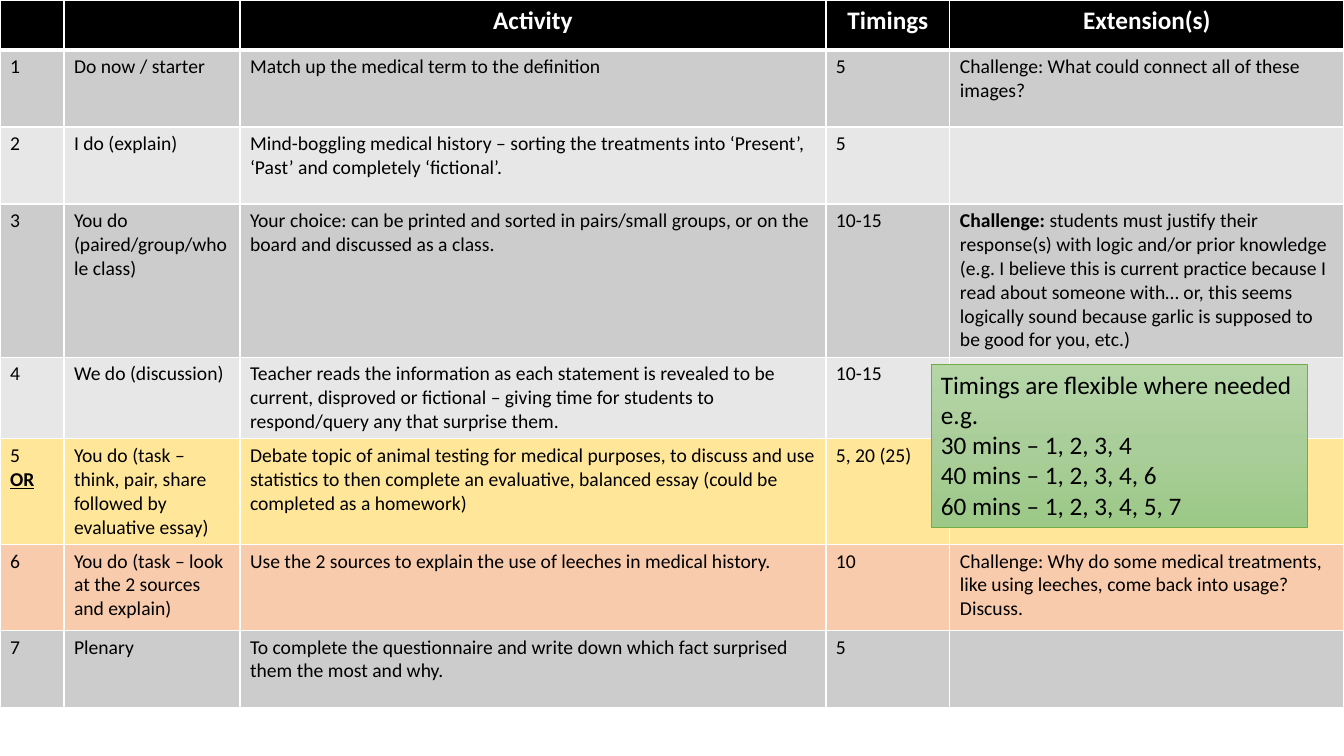
from copy import deepcopy

from lxml.etree import SubElement
from pptx import Presentation
from pptx.dml.color import RGBColor
from pptx.enum.shapes import MSO_SHAPE
from pptx.enum.text import MSO_ANCHOR, MSO_AUTO_SIZE, PP_ALIGN
from pptx.oxml.ns import qn
from pptx.util import Pt

PX = 12192000 / 1344
BLACK, WHITE = "000000", "FFFFFF"
GREY, LIGHT, YELLOW, PEACH = "CCCCCC", "E7E7E7", "FFE699", "F8CBAD"
HEADING = {"size": Pt(18), "bold": True}
BODY = {"size": Pt(14), "bold": False}
NOTE = {"size": Pt(18)}

COLUMNS = [64, 176, 586, 124, 394]
HEADINGS = ["", "", "Activity", "Timings", "Extension(s)"]
# Each lesson step: row height, fill, cells. A cell is a string or a list of
# paragraphs, each a list of (text, format) runs.
STEPS = [
    (77, GREY, ["1", "Do now / starter", "Match up the medical term to the definition", "5",
                "Challenge: What could connect all of these images?"]),
    (77, LIGHT, ["2", "I do (explain)",
                 "Mind-boggling medical history – sorting the treatments into ‘Present’, "
                 "‘Past’ and completely ‘fictional’.", "5", ""]),
    (149, GREY, ["3", "You do (paired/group/whole class)",
                 "Your choice: can be printed and sorted in pairs/small groups, or on the "
                 "board and discussed as a class.", "10-15",
                 [[("Challenge: ", {"bold": True}),
                   ("students must justify their response(s) with logic and/or prior "
                    "knowledge (e.g. I believe this is current practice because I read about "
                    "someone with… or, this seems logically sound because garlic is supposed "
                    "to be good for you, etc.)", {})]]]),
    (80, LIGHT, ["4", "We do (discussion)",
                 "Teacher reads the information as each statement is revealed to be current, "
                 "disproved or fictional – giving time for students to respond/query any that "
                 "surprise them.", "10-15", ""]),
    (100, YELLOW, [[[("5", {})], [("OR", {"bold": True, "underline": True})]],
                   "You do (task – think, pair, share followed by evaluative essay)",
                   "Debate topic of animal testing for medical purposes, to discuss and use "
                   "statistics to then complete an evaluative, balanced essay (could be "
                   "completed as a homework)", "5, 20 (25)", ""]),
    (86, PEACH, ["6", "You do (task – look at the 2 sources and explain)",
                 "Use the 2 sources to explain the use of leeches in medical history.", "10",
                 "Challenge: Why do some medical treatments, like using leeches, come back "
                 "into usage? Discuss."]),
    (77, GREY, ["7", "Plenary",
                "To complete the questionnaire and write down which fact surprised them the "
                "most and why.", "5", ""]),
]
TIMING_NOTE = ["Timings are flexible where needed", "e.g.", "30 mins – 1, 2, 3, 4",
               "40 mins – 1, 2, 3, 4, 6", "60 mins – 1, 2, 3, 4, 5, 7"]


def px(n):
    return round(n * PX)


def rgb(code):
    return RGBColor.from_string(code)


class LessonSlide:
    font = "Calibri"

    def __init__(self, prs):
        self.s = prs.slides.add_slide(prs.slide_layouts[6])

    def text(self, tf, paragraphs, style, color, align=PP_ALIGN.LEFT):
        if isinstance(paragraphs, str):
            paragraphs = [[(paragraphs, {})]] if paragraphs else []
        for i, runs in enumerate(paragraphs):
            p = tf.add_paragraph() if i else tf.paragraphs[0]
            p.alignment = align
            for words, extra in runs:
                r = p.add_run()
                r.text = words
                r.font.color.rgb = rgb(color)
                for name, value in {"name": self.font, **style, **extra}.items():
                    setattr(r.font, name, value)

    def borders(self, cell, top, bottom):
        """Draw white cell edges, with the top and bottom widths in points."""
        tcPr = cell._tc.get_or_add_tcPr()
        for i, (side, width) in enumerate(zip("LRTB", (1, 1, top, bottom))):
            ln = SubElement(tcPr, qn(f"a:ln{side}"), w=str(Pt(width)))
            SubElement(SubElement(ln, qn("a:solidFill")), qn("a:srgbClr"), val=WHITE)
            tcPr.insert(i, ln)

    def table(self, x, y, columns, rows):
        heights = [height for height, _, _ in rows]
        t = self.s.shapes.add_table(len(rows), len(columns), px(x), px(y),
                                    px(sum(columns)), px(sum(heights))).table
        t.horz_banding = False
        for column, width in zip(t.columns, columns):
            column.width = px(width)
        for i, (height, fill, contents) in enumerate(rows):
            t.rows[i].height = px(height)
            look = (HEADING, WHITE, PP_ALIGN.CENTER) if i == 0 else (BODY, BLACK)
            for cell, content in zip(t.rows[i].cells, contents):
                cell.fill.solid()
                cell.fill.fore_color.rgb = rgb(fill)
                self.borders(cell, 3 if i == 1 else 1, 3 if i == 0 else 1)
                self.text(cell.text_frame, content, *look)

    def gradient_box(self, x, y, w, h, colors, line, lines):
        sp = self.s.shapes.add_shape(MSO_SHAPE.RECTANGLE, px(x), px(y), px(w), px(h))
        sp.shadow.inherit = False
        sp.fill.gradient()
        sp.fill.gradient_angle = 270
        stops = sp._element.spPr.find(".//" + qn("a:gsLst"))
        stops.insert(1, deepcopy(stops[0]))
        for i, (stop, color) in enumerate(zip(sp.fill.gradient_stops, colors)):
            stop.position = i / (len(colors) - 1)
            stop.color.rgb = rgb(color)
        sp.line.color.rgb = rgb(line)
        sp.line.width = Pt(0.5)
        tf = sp.text_frame
        for name, value in {"word_wrap": False, "vertical_anchor": MSO_ANCHOR.TOP,
                            "auto_size": MSO_AUTO_SIZE.SHAPE_TO_FIT_TEXT}.items():
            setattr(tf, name, value)
        self.text(tf, [[(words, {})] for words in lines], NOTE, BLACK)


def main():
    prs = Presentation()
    prs.slide_width, prs.slide_height = px(1344), px(756)
    lesson = LessonSlide(prs)
    lesson.table(0, 0, COLUMNS, [(50, BLACK, HEADINGS), *STEPS])
    lesson.gradient_box(931, 364, 376, 163, ["B5D5A7", "AACE9A", "9CC987"], "70AD47",
                        TIMING_NOTE)
    prs.save("out.pptx")


if __name__ == "__main__":
    main()
